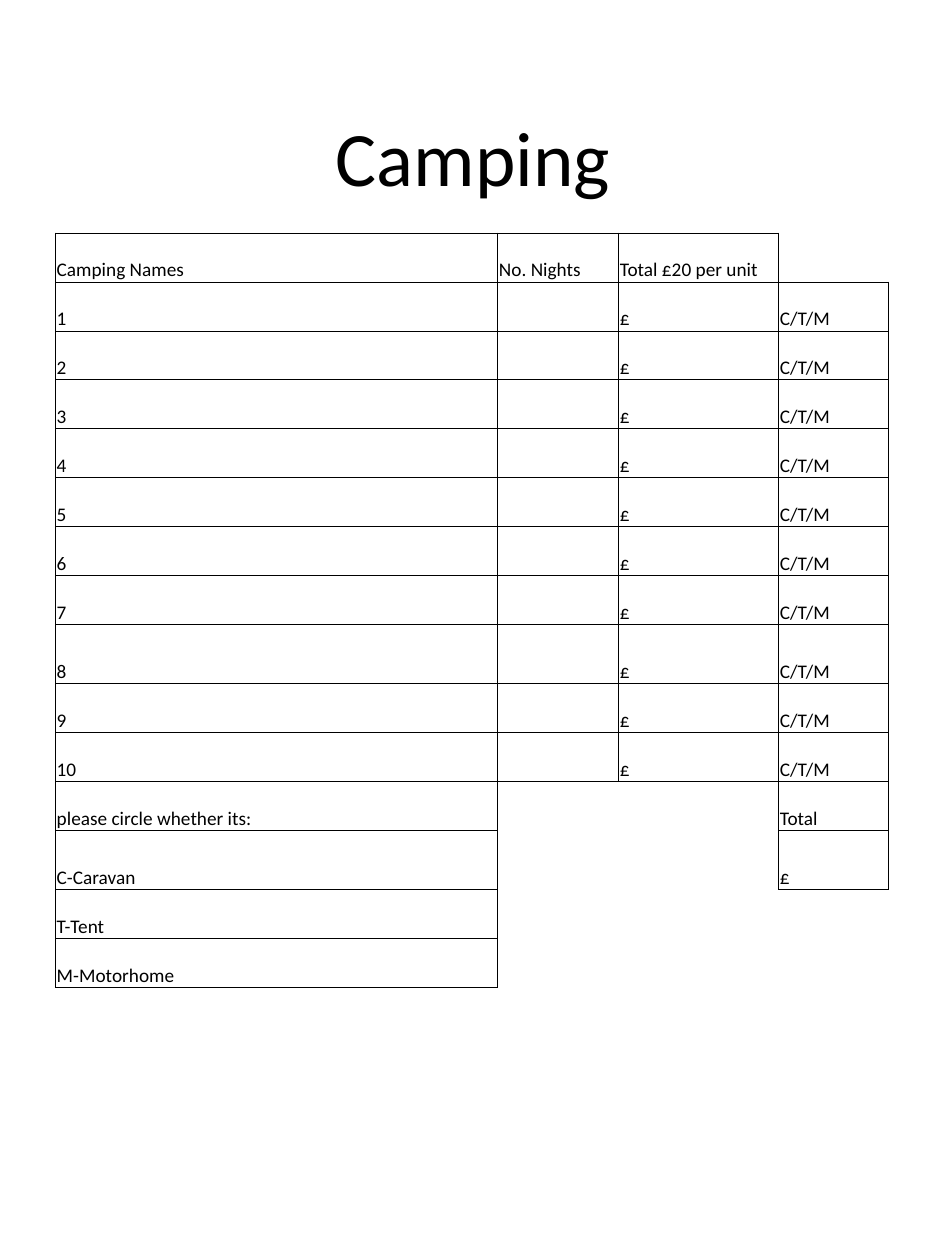
from lxml import etree
from pptx import Presentation
from pptx.dml.color import RGBColor
from pptx.enum.text import MSO_ANCHOR as Anchor, PP_ALIGN as Align
from pptx.oxml.ns import qn
from pptx.util import Inches, Pt

BLACK = RGBColor(0, 0, 0)
WHITE = RGBColor(255, 255, 255)
FONT = "Calibri"

TITLE = "Camping"
HEADER = ["Camping Names", "No. Nights", "Total £20 per unit", ""]
ENTRIES = [[str(number), "", "£", "C/T/M"] for number in range(1, 11)]
FOOTER = [
    ["please circle whether its:", "", "", "Total"],
    ["C-Caravan", "", "", "£"],
    ["T-Tent", "", "", ""],
    ["M-Motorhome", "", "", ""],
]
ROWS = [HEADER] + ENTRIES + FOOTER

COLUMN_WIDTHS = [3.51, 0.96, 1.27, 0.87]
TABLE_LEFT, TABLE_TOP, TABLE_HEIGHT = 0.44, 1.85, 5.99
TALL_ROWS, TALL_HEIGHT = (8, 12), 0.47
ROW_HEIGHT = (TABLE_HEIGHT - TALL_HEIGHT * len(TALL_ROWS)) / (len(ROWS) - len(TALL_ROWS))

CELL_FORMAT = {
    "margin_left": Inches(0.01),
    "margin_right": Inches(0.01),
    "margin_top": Inches(0.01),
    "margin_bottom": 0,
    "vertical_anchor": Anchor.BOTTOM,
}
SIDES = {"a:lnL": (0, -1), "a:lnR": (0, 1), "a:lnT": (-1, 0), "a:lnB": (1, 0)}


def apply_format(target, values):
    for name, value in values.items():
        setattr(target, name, value)


def write(para, text, size):
    span = para.add_run()
    span.text = text
    apply_format(span.font, {"name": FONT, "size": Pt(size)})
    span.font.color.rgb = BLACK


def is_boxed(row, column):
    if not (0 <= row < len(ROWS) and 0 <= column < len(COLUMN_WIDTHS)):
        return False
    is_entry = 1 <= row <= len(ENTRIES)
    return is_entry or ROWS[row][column] != ""


def draw_borders(cell, row, column):
    properties = cell._tc.get_or_add_tcPr()
    for tag, (down, across) in SIDES.items():
        line = etree.SubElement(properties, qn(tag), w=str(Pt(0.5)))
        if is_boxed(row, column) or is_boxed(row + down, column + across):
            fill = etree.SubElement(line, qn("a:solidFill"))
            etree.SubElement(fill, qn("a:srgbClr"), val=str(BLACK))
        else:
            etree.SubElement(line, qn("a:noFill"))


def add_title(page):
    title = page.shapes.title
    apply_format(title, {
        "left": Inches(0.38), "top": Inches(0.4),
        "width": Inches(6.75), "height": Inches(1.67),
    })
    title.text_frame.vertical_anchor = Anchor.MIDDLE
    para = title.text_frame.paragraphs[0]
    para.alignment = Align.CENTER
    write(para, TITLE, 44)


def add_booking_table(page):
    table = page.shapes.add_table(
        len(ROWS), len(COLUMN_WIDTHS), Inches(TABLE_LEFT), Inches(TABLE_TOP),
        Inches(sum(COLUMN_WIDTHS)), Inches(TABLE_HEIGHT)).table
    apply_format(table, {"first_row": False, "horz_banding": False})
    for column, width in zip(table.columns, COLUMN_WIDTHS):
        column.width = Inches(width)
    for row, texts in enumerate(ROWS):
        table.rows[row].height = Inches(TALL_HEIGHT if row in TALL_ROWS else ROW_HEIGHT)
        for column, text in enumerate(texts):
            cell = table.cell(row, column)
            apply_format(cell, CELL_FORMAT)
            draw_borders(cell, row, column)
            cell.fill.background()
            if text:
                write(cell.text_frame.paragraphs[0], text, 11)


def main():
    deck = Presentation()
    apply_format(deck, {"slide_width": Inches(7.5), "slide_height": Inches(10)})
    page = deck.slides.add_slide(deck.slide_layouts[5])
    page.background.fill.solid()
    page.background.fill.fore_color.rgb = WHITE
    add_title(page)
    add_booking_table(page)
    deck.save("out.pptx")


if __name__ == "__main__":
    main()
